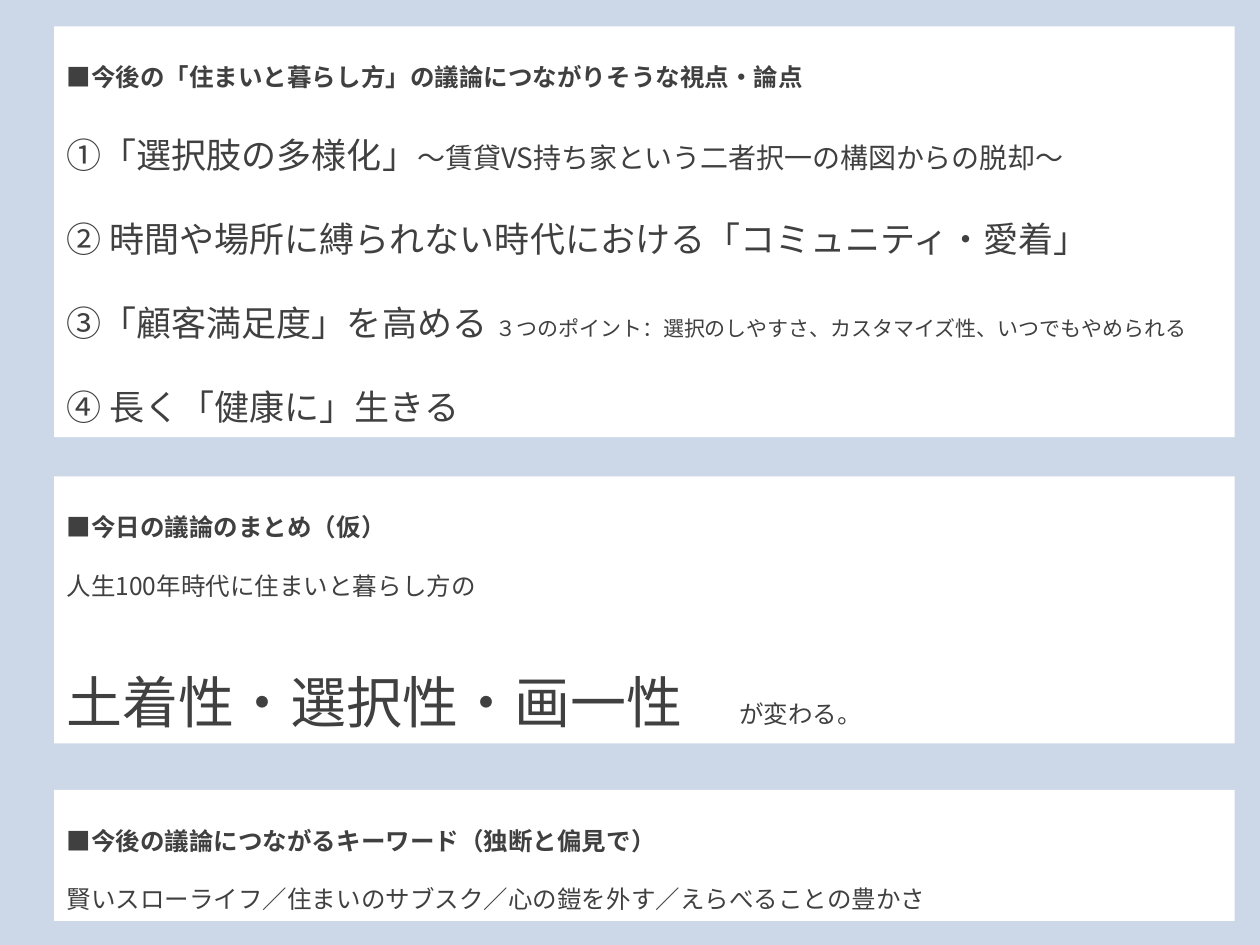
from pptx import Presentation
from pptx.dml.color import RGBColor
from pptx.enum.shapes import MSO_SHAPE as Shape
from pptx.enum.text import MSO_ANCHOR as Anchor, MSO_AUTO_SIZE as Fit, PP_ALIGN as Align
from pptx.oxml.ns import qn
from pptx.util import Inches, Pt
from lxml.etree import SubElement

FONT = "Noto Sans CJK JP"
LEFT, WIDTH = 0.43, 9.37

# Panels: top, height, heading, lines of (text, size) runs
PANELS = [
    (0.21, 3.26, "■今後の「住まいと暮らし方」の議論につながりそうな視点・論点", [
        [("①「選択肢の多様化」", 20),
         ("～賃貸VS持ち家という二者択一の構図からの脱却～", 16)],
        [("② 時間や場所に縛られない時代における「コミュニティ・愛着」", 20)],
        [("③「顧客満足度」を高める ", 20),
         ("３つのポイント：選択のしやすさ、カスタマイズ性、いつでもやめられる", 12)],
        [("④ 長く「健康に」生きる", 20)],
    ]),
    (3.78, 2.12, "■今日の議論のまとめ（仮）", [
        [("人生100年時代に住まいと暮らし方の", 14)],
        [("土着性・選択性・画一性　", 32), ("が変わる。", 14)],
    ]),
    (6.27, 1.04, "■今後の議論につながるキーワード（独断と偏見で）", [
        [("賢いスローライフ／住まいのサブスク／心の鎧を外す／えらべることの豊かさ", 14)],
    ]),
]


def paint(fill, code):
    fill.solid()
    fill.fore_color.rgb = RGBColor.from_string(code)


def write(para, runs, bold):
    para.alignment = Align.LEFT
    para.line_spacing = 2.0
    for text, size in runs:
        run = para.add_run()
        run.text = text
        font = run.font
        font.size, font.bold, font.name = Pt(size), bold, FONT
        paint(font.fill, "404040")
        # East Asian typeface
        SubElement(font._element, qn("a:ea")).set("typeface", FONT)


def panel(slide, top, height, head, lines):
    box = slide.shapes.add_shape(Shape.RECTANGLE, *map(Inches, (LEFT, top, WIDTH, height)))
    box.shadow.inherit = False
    paint(box.fill, "FFFFFF")
    box.line.fill.background()
    frame = box.text_frame
    frame.word_wrap = True
    frame.auto_size = Fit.SHAPE_TO_FIT_TEXT
    frame.vertical_anchor = Anchor.TOP
    write(frame.paragraphs[0], [(head, 14)], True)
    for runs in lines:
        write(frame.add_paragraph(), runs, False)


deck = Presentation()
deck.slide_width, deck.slide_height = Inches(10), Inches(7.5)
slide = deck.slides.add_slide(deck.slide_layouts[6])
paint(slide.background.fill, "CCD8E7")
for item in PANELS:
    panel(slide, *item)
deck.save("out.pptx")
